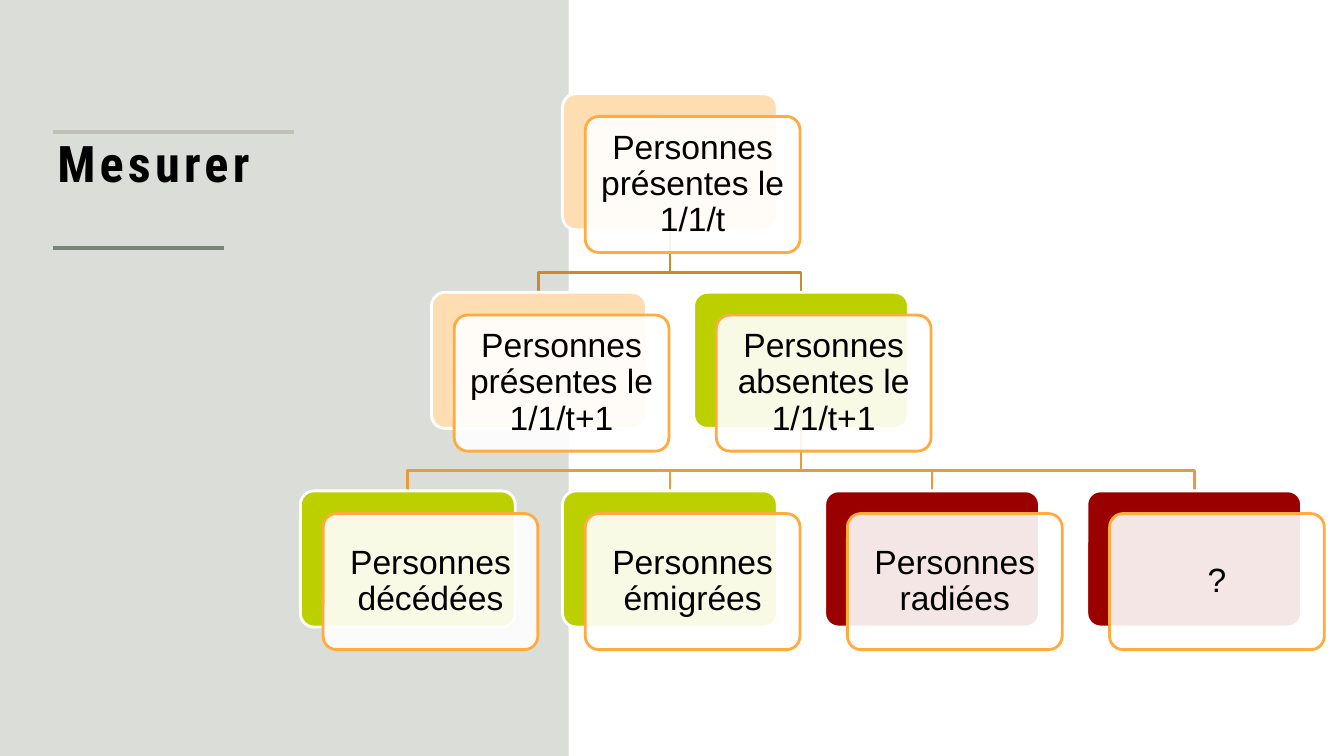
from dataclasses import dataclass

from lxml.etree import SubElement
from pptx import Presentation
from pptx.dml.color import RGBColor
from pptx.enum.shapes import MSO_CONNECTOR, MSO_SHAPE
from pptx.enum.text import MSO_ANCHOR, MSO_AUTO_SIZE, PP_ALIGN
from pptx.oxml.ns import qn
from pptx.util import Inches, Pt

COLOURS = {
    "panel": "DBDED8", "upper rule": "C1C1B5", "lower rule": "7A8378",
    "text": "000000", "white": "FFFFFF", "frame": "FFAB40",
    "present": "FFDDB3", "absent": "BCD000", "unknown": "9A0000",
    "first split": "CC8933", "second split": "E79B3A",
}

# Tree grid: one column is half the distance between sibling cards
TREE_LEFT, TREE_TOP = 2.98, 0.93
COLUMN, ROW = 1.3, 1.97
CARD_WIDTH, CARD_HEIGHT = 2.13, 1.35
FRONT_SHIFT = 0.225
BEND_RISE = 0.2


@dataclass(frozen=True)
class Group:
    label: str
    column: int
    row: int
    tone: str

    @property
    def left(self) -> float:
        return TREE_LEFT + self.column * COLUMN

    @property
    def top(self) -> float:
        return TREE_TOP + self.row * ROW

    @property
    def centre(self) -> float:
        return self.left + CARD_WIDTH / 2


@dataclass(frozen=True)
class Split:
    parent: Group
    children: tuple[Group, ...]
    colour: str


@dataclass(frozen=True)
class Rule:
    top: float
    right: float
    colour: str


START = Group("Personnes présentes le 1/1/t", 2, 0, "present")
STAYED = Group("Personnes présentes le 1/1/t+1", 1, 1, "present")
ABSENT = Group("Personnes absentes le 1/1/t+1", 3, 1, "absent")
OUTCOMES = (
    Group("Personnes décédées", 0, 2, "absent"),
    Group("Personnes émigrées", 2, 2, "absent"),
    Group("Personnes radiées", 4, 2, "unknown"),
    Group("?", 6, 2, "unknown"),
)
SPLITS = (
    Split(ABSENT, OUTCOMES[::-1], "second split"),
    Split(START, (ABSENT, STAYED), "first split"),
)
RULES = (Rule(1.31, 2.92, "upper rule"), Rule(2.46, 2.22, "lower rule"))
RULE_LEFT = 0.53


def rgb(name: str) -> RGBColor:
    return RGBColor.from_string(COLOURS[name])


def set_line(shape, colour: str, width: float) -> None:
    shape.line.color.rgb = rgb(colour)
    shape.line.width = Pt(width)


def add_panel(slide, height: int) -> None:
    panel = slide.shapes.add_shape(MSO_SHAPE.RECTANGLE, 0, 0, Inches(5.64), height)
    panel.shadow.inherit = False
    panel.fill.solid()
    panel.fill.fore_color.rgb = rgb("panel")
    panel.line.fill.background()


def add_title(slide) -> None:
    title = slide.shapes.add_textbox(*map(Inches, (0.47, 1.26, 5.01, 0.71)))
    frame = title.text_frame
    frame.word_wrap = True
    frame.auto_size = MSO_AUTO_SIZE.SHAPE_TO_FIT_TEXT
    paragraph = frame.paragraphs[0]
    run = paragraph.add_run()
    run.text = "Mesurer"
    font = run.font
    font.name, font.size, font.bold = "Roboto Condensed", Pt(36), True
    font.color.rgb = rgb("text")
    run._r.get_or_add_rPr().set("spc", "300")


def add_rule(slide, rule: Rule) -> None:
    ends = (RULE_LEFT, rule.top, rule.right, rule.top)
    line = slide.shapes.add_connector(MSO_CONNECTOR.STRAIGHT, *map(Inches, ends))
    set_line(line, rule.colour, 3)
    SubElement(line._element.spPr, qn("a:effectLst"))


def add_branch(slide, parent: Group, child: Group, colour: str) -> None:
    start = parent.top + CARD_HEIGHT
    bend = child.top - BEND_RISE
    builder = slide.shapes.build_freeform(Inches(parent.centre), Inches(start))
    corners = ((parent.centre, bend), (child.centre, bend), (child.centre, child.top))
    builder.add_line_segments(
        [(Inches(x), Inches(y)) for x, y in corners], close=False)
    branch = builder.convert_to_shape()
    branch.shadow.inherit = False
    branch.fill.background()
    set_line(branch, colour, 2)


def add_card(slide, group: Group, shift: float, fill: str, line: str):
    card = slide.shapes.add_shape(
        MSO_SHAPE.ROUNDED_RECTANGLE, Inches(group.left + shift),
        Inches(group.top + shift), Inches(CARD_WIDTH), Inches(CARD_HEIGHT))
    card.adjustments[0] = 0.1
    card.shadow.inherit = False
    card.fill.solid()
    card.fill.fore_color.rgb = rgb(fill)
    set_line(card, line, 2)
    return card


def add_group(slide, group: Group) -> None:
    """Draw a coloured card with a translucent labelled card over it."""
    add_card(slide, group, 0, group.tone, "white")
    front = add_card(slide, group, FRONT_SHIFT, "white", "frame")
    tint = front._element.spPr.find(qn("a:solidFill"))[0]
    SubElement(tint, qn("a:alpha"), val="90000")

    frame = front.text_frame
    frame.word_wrap = True
    frame.vertical_anchor = MSO_ANCHOR.MIDDLE
    frame.margin_left = frame.margin_right = Inches(0.1)
    frame.margin_top = frame.margin_bottom = Inches(0.1)
    paragraph = frame.paragraphs[0]
    paragraph.text = group.label
    paragraph.alignment = PP_ALIGN.CENTER
    paragraph.line_spacing = 0.9
    font = paragraph.font
    font.name, font.size = "Arial", Pt(24)
    font.color.rgb = rgb("text")


def main() -> None:
    deck = Presentation()
    deck.slide_width, deck.slide_height = Inches(13.33), Inches(7.5)
    slide = deck.slides.add_slide(deck.slide_layouts[6])

    add_panel(slide, deck.slide_height)
    add_title(slide)
    for rule in RULES:
        add_rule(slide, rule)
    for split in SPLITS:
        for child in split.children:
            add_branch(slide, split.parent, child, split.colour)
    for group in (START, STAYED, ABSENT, *OUTCOMES):
        add_group(slide, group)

    deck.save("out.pptx")


if __name__ == "__main__":
    main()
